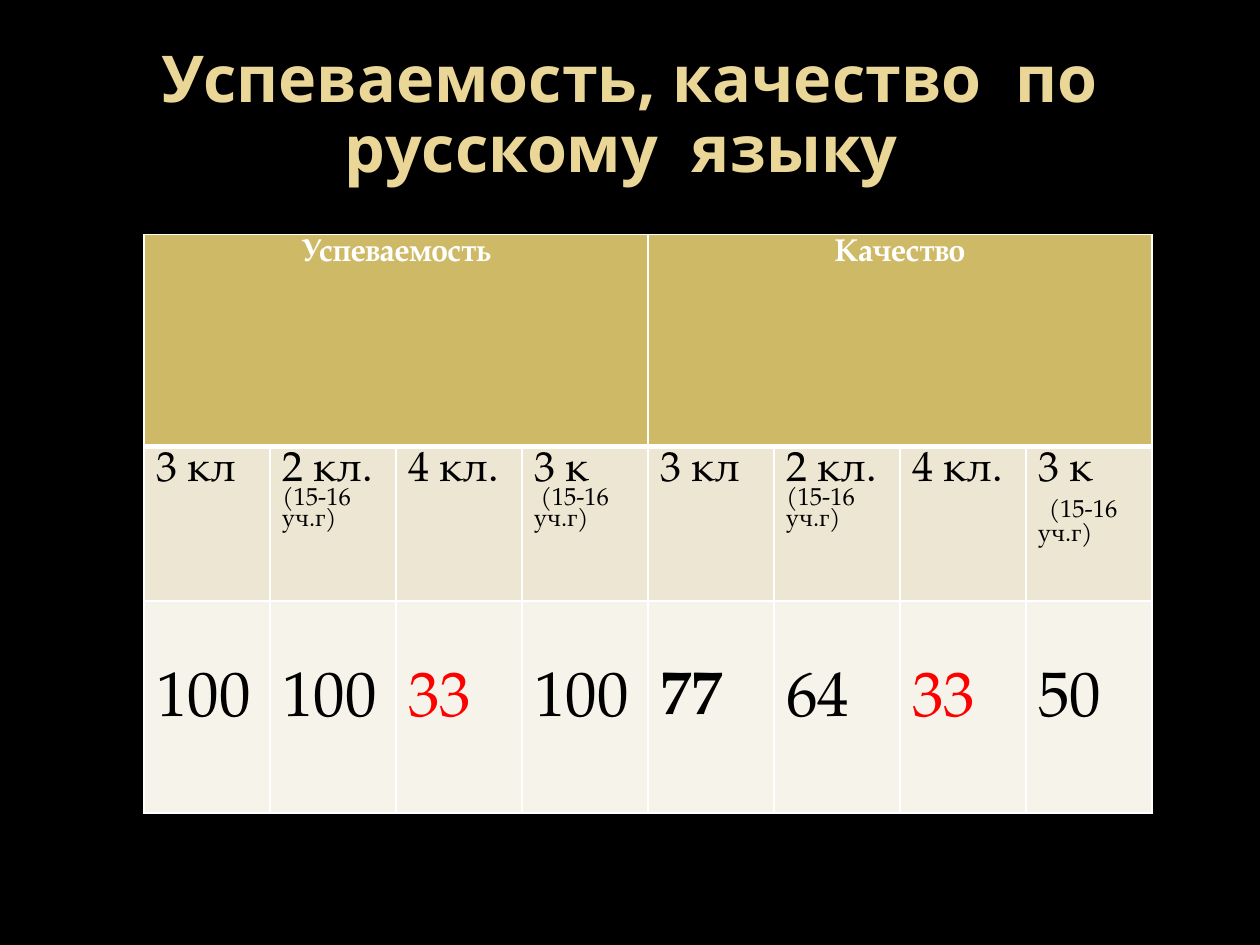
from lxml import etree
from pptx import Presentation
from pptx.dml.color import RGBColor
from pptx.enum.text import MSO_ANCHOR, PP_ALIGN
from pptx.oxml.ns import qn
from pptx.util import Cm, Pt

# Content: a cell is a list of paragraphs, a paragraph a list of (text, size)
TITLE = "Успеваемость, качество  по русскому  языку "
GROUPS = ["Успеваемость", "Качество"]
YEAR = "(15-16 уч.г)"
THIRD = [[("3 кл", 24)]]
SECOND = [[("2 кл. ", 24), (YEAR, 14)]]
FOURTH = [[("4 кл.", 24)]]
CLASSES = [
    THIRD, SECOND, FOURTH, [[("3 к", 24)], [(" " + YEAR, 14)]],
    THIRD, SECOND, FOURTH, [[("3 к", 24)], [(" ", 24), (YEAR, 14)]],
]
VALUES = ["100", "100", "33", "100", "77", "64", "33", "50"]
LOW, BOLD = "33", "77"

# Style
BLACK = RGBColor(0x00, 0x00, 0x00)
WHITE = RGBColor(0xFF, 0xFF, 0xFF)
RED = RGBColor(0xFF, 0x00, 0x00)
CREAM = RGBColor(0xEA, 0xD6, 0x96)
GOLD = RGBColor(0xCE, 0xB9, 0x66)
SAND = RGBColor(0xED, 0xE6, 0xD3)
IVORY = RGBColor(0xF6, 0xF3, 0xEA)
ROW_FILLS = [GOLD, SAND, IVORY]
TITLE_FONT, TABLE_FONT = "Noto Sans", "TeX Gyre Pagella"
CENTER, LEFT = PP_ALIGN.CENTER, PP_ALIGN.LEFT
MIDDLE = MSO_ANCHOR.MIDDLE

# Table grid
COLUMN_WIDTH = Cm(2.54)
ROW_HEIGHTS = [Cm(4.27), Cm(3.12), Cm(4.27)]
COLUMNS = len(VALUES)
GROUP_SPAN = COLUMNS // len(GROUPS)


def add_span(para, text, size, color, font=TABLE_FONT, bold=False):
    span = para.add_run()
    span.text = text
    span.font.size = Pt(size)
    span.font.name = font
    span.font.bold = bold
    span.font.color.rgb = color


def write_cell(cell, paragraphs, color=BLACK, bold=False, align=LEFT):
    frame = cell.text_frame
    for index, spans in enumerate(paragraphs):
        para = frame.add_paragraph() if index else frame.paragraphs[0]
        para.alignment = align
        para.line_spacing = 0.85
        for text, size in spans:
            add_span(para, text, size, color, bold=bold)


def set_border(cell, side, points):
    line = etree.SubElement(cell._tc.get_or_add_tcPr(), qn("a:" + side), w=str(Pt(points)))
    fill = etree.SubElement(line, qn("a:solidFill"))
    etree.SubElement(fill, qn("a:srgbClr"), val=str(WHITE))


def add_title(page):
    box = page.shapes.add_textbox(Cm(1.27), Cm(0.76), Cm(22.86), Cm(3.18))
    frame = box.text_frame
    frame.word_wrap = True
    frame.vertical_anchor = MIDDLE
    para = frame.paragraphs[0]
    para.alignment = CENTER
    para.line_spacing = 0.9
    add_span(para, TITLE, 36.9, CREAM, TITLE_FONT, True)


def add_results(page):
    table = page.shapes.add_table(
        len(ROW_HEIGHTS), COLUMNS, Cm(2.9), Cm(4.73),
        COLUMN_WIDTH * COLUMNS, sum(ROW_HEIGHTS),
    ).table
    table.first_row = False
    table.horz_banding = False
    for column in table.columns:
        column.width = COLUMN_WIDTH

    # Fills and borders, with a thick rule under the header
    for r, height in enumerate(ROW_HEIGHTS):
        table.rows[r].height = height
        for c in range(COLUMNS):
            cell = table.cell(r, c)
            set_border(cell, "lnL", 1)
            set_border(cell, "lnR", 1)
            set_border(cell, "lnT", 3 if r == 1 else 1)
            set_border(cell, "lnB", 3 if r == 0 else 1)
            cell.fill.solid()
            cell.fill.fore_color.rgb = ROW_FILLS[r]

    # Header groups
    for index, name in enumerate(GROUPS):
        first = index * GROUP_SPAN
        cell = table.cell(0, first)
        cell.merge(table.cell(0, first + GROUP_SPAN - 1))
        write_cell(cell, [[(name, 18)]], WHITE, True, CENTER)

    # Classes and their results
    for c, (label, value) in enumerate(zip(CLASSES, VALUES)):
        write_cell(table.cell(1, c), label)
        cell = table.cell(2, c)
        cell.margin_top = Cm(1.45)
        write_cell(cell, [[(value, 36)]], RED if value == LOW else BLACK, value == BOLD)


def main():
    deck = Presentation()
    deck.slide_width, deck.slide_height = Cm(25.4), Cm(19.05)
    page = deck.slides.add_slide(deck.slide_layouts[6])
    page.background.fill.solid()
    page.background.fill.fore_color.rgb = BLACK
    add_title(page)
    add_results(page)
    deck.save("out.pptx")


if __name__ == "__main__":
    main()
